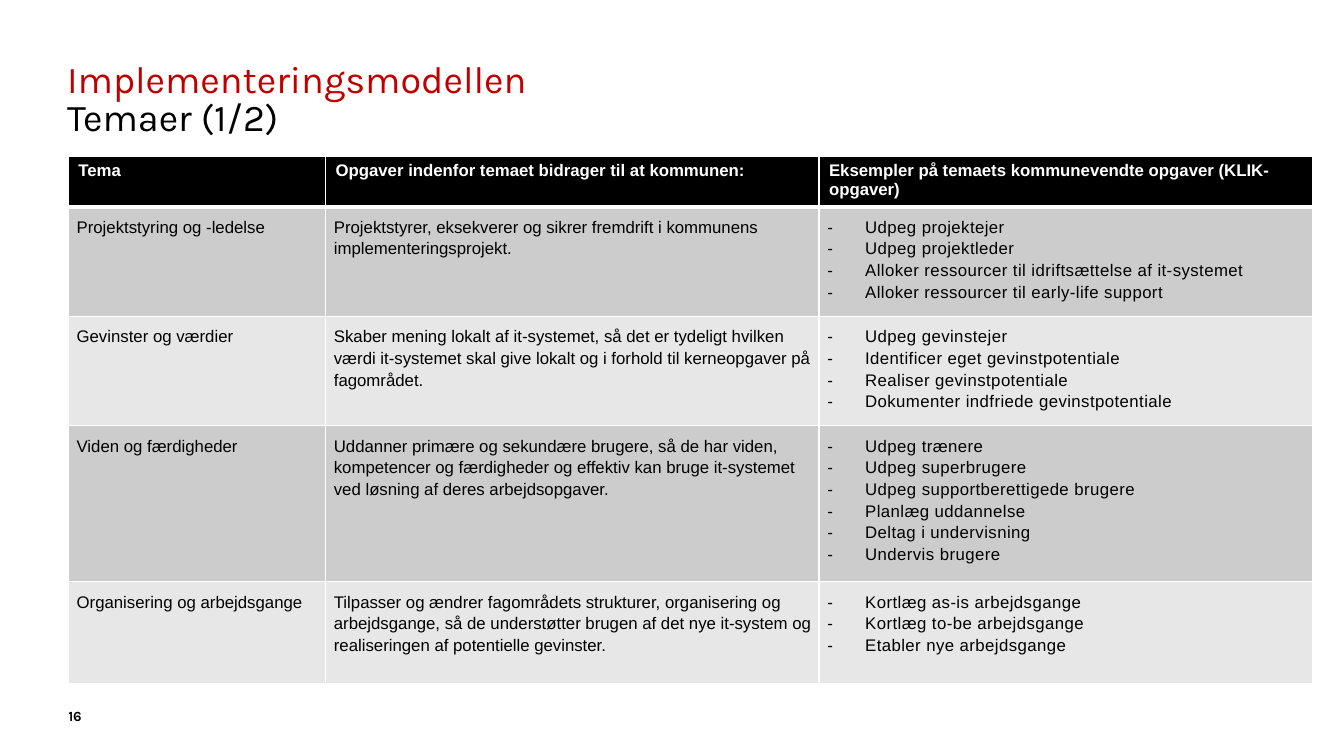
"""Build the slide that lists the themes of the implementation model."""
from dataclasses import dataclass

from lxml import etree
from pptx import Presentation
from pptx import util as u
from pptx.dml.color import RGBColor
from pptx.enum import text
from pptx.oxml import ns

EMU_PER_PX = 9525
BLACK = RGBColor(0x00, 0x00, 0x00)
WHITE = RGBColor(0xFF, 0xFF, 0xFF)
RED = RGBColor(0xC0, 0x00, 0x00)
BANDS = (RGBColor(0xCC, 0xCC, 0xCC), RGBColor(0xE7, 0xE7, 0xE7))
COLUMN_WIDTHS = (245, 470, 470)
HEADER_HEIGHT = 45
BULLET_INDENT = 36
HEADINGS = (
    "Tema",
    "Opgaver indenfor temaet bidrager til at kommunen:",
    "Eksempler på temaets kommunevendte opgaver (KLIK-opgaver)",
)


@dataclass(frozen=True)
class Theme:
    """One table row: a theme, its purpose and its example tasks."""
    name: str
    purpose: str
    tasks: tuple[str, ...]
    height: int = 97


THEMES = (
    Theme(
        "Projektstyring og -ledelse",
        "Projektstyrer, eksekverer og sikrer fremdrift i kommunens implementeringsprojekt.",
        ("Udpeg projektejer", "Udpeg projektleder",
         "Alloker ressourcer til idriftsættelse af it-systemet",
         "Alloker ressourcer til early-life support"),
    ),
    Theme(
        "Gevinster og værdier",
        "Skaber mening lokalt af it-systemet, så det er tydeligt hvilken værdi it-systemet "
        "skal give lokalt og i forhold til kerneopgaver på fagområdet.",
        ("Udpeg gevinstejer", "Identificer eget gevinstpotentiale",
         "Realiser gevinstpotentiale", "Dokumenter indfriede gevinstpotentiale"),
    ),
    Theme(
        "Viden og færdigheder",
        "Uddanner primære og sekundære brugere, så de har viden, kompetencer og færdigheder "
        "og effektiv kan bruge it-systemet ved løsning af deres arbejdsopgaver.",
        ("Udpeg trænere", "Udpeg superbrugere", "Udpeg supportberettigede brugere",
         "Planlæg uddannelse", "Deltag i undervisning", "Undervis brugere"),
        height=139,
    ),
    Theme(
        "Organisering og arbejdsgange",
        "Tilpasser og ændrer fagområdets strukturer, organisering og arbejdsgange, så de "
        "understøtter brugen af det nye it-system og realiseringen af potentielle gevinster.",
        ("Kortlæg as-is arbejdsgange", "Kortlæg to-be arbejdsgange",
         "Etabler nye arbejdsgange"),
    ),
)


def px(length: int) -> u.Emu:
    """Turn px into EMU."""
    return u.Emu(length * EMU_PER_PX)


def style(paragraph, name: str, size: int, color: RGBColor, bold: bool = False) -> None:
    """Set the font of a whole paragraph."""
    font = paragraph.font
    font.name, font.size, font.bold = name, u.Pt(size), bold
    font.color.rgb = color


def add_text(page, left: int, top: int, width: int, height: int, anchor):
    """Add a wrapping text box without insets and return its text frame."""
    frame = page.shapes.add_textbox(px(left), px(top), px(width), px(height)).text_frame
    frame.word_wrap = True
    frame.vertical_anchor = anchor
    frame.margin_left = frame.margin_top = frame.margin_right = frame.margin_bottom = 0
    return frame


def add_title(page) -> None:
    """Add the two-line title."""
    frame = add_text(page, 64, 60, 1144, 88, text.MSO_ANCHOR.TOP)
    lines = (("Implementeringsmodellen", RED), ("Temaer (1/2)", BLACK))
    for index, (line, color) in enumerate(lines):
        paragraph = frame.add_paragraph() if index else frame.paragraphs[0]
        paragraph.text = line
        paragraph.line_spacing = u.Pt(27)
        style(paragraph, "Karla", 27, color)


def add_page_number(page) -> None:
    """Add the page number."""
    frame = add_text(page, 65, 653, 50, 37, text.MSO_ANCHOR.BOTTOM)
    paragraph = frame.paragraphs[0]
    paragraph.text = "16"
    paragraph.line_spacing = u.Pt(13)
    style(paragraph, "Karla", 10, BLACK, bold=True)


def paint_cell(cell, color: RGBColor, top: int = 1, bottom: int = 1) -> None:
    """Fill a cell and draw its white borders, with widths in points."""
    cell.fill.solid()
    cell.fill.fore_color.rgb = color
    properties = cell._tc.get_or_add_tcPr()
    borders = (("lnL", 1), ("lnR", 1), ("lnT", top), ("lnB", bottom))
    for position, (tag, width) in enumerate(borders):
        line = etree.Element(ns.qn(f"a:{tag}"), w=str(u.Pt(width)))
        fill = etree.SubElement(line, ns.qn("a:solidFill"))
        etree.SubElement(fill, ns.qn("a:srgbClr"), val=str(WHITE))
        properties.insert(position, line)


def add_dash(paragraph) -> None:
    """Give a task paragraph a dash, a hanging indent and spaced letters."""
    properties = paragraph._p.get_or_add_pPr()
    properties.set("marL", str(px(BULLET_INDENT)))
    properties.set("indent", str(-px(BULLET_INDENT)))
    etree.SubElement(properties, ns.qn("a:buFont"), typeface="Arial")
    etree.SubElement(properties, ns.qn("a:buChar"), char="-")
    for run in paragraph.runs:
        run._r.get_or_add_rPr().set("spc", "30")


def fill_body_cell(cell, lines: tuple[str, ...], dashed: bool) -> None:
    """Write the lines of a body cell."""
    cell.margin_left = cell.margin_top = cell.margin_bottom = px(8)
    cell.margin_right = px(3)
    frame = cell.text_frame
    for index, line in enumerate(lines):
        paragraph = frame.add_paragraph() if index else frame.paragraphs[0]
        paragraph.text = line
        paragraph.line_spacing = 1.15
        if dashed:
            add_dash(paragraph)
        style(paragraph, "Arial", 12, BLACK)


def add_theme_table(page) -> None:
    """Add the table of themes."""
    heights = [HEADER_HEIGHT] + [theme.height for theme in THEMES]
    table = page.shapes.add_table(
        len(heights), len(COLUMN_WIDTHS), px(65), px(149),
        px(sum(COLUMN_WIDTHS)), px(sum(heights)),
    ).table
    table.horz_banding = False
    for column, width in zip(table.columns, COLUMN_WIDTHS):
        column.width = px(width)
    for row, height in zip(table.rows, heights):
        row.height = px(height)
    for column, heading in enumerate(HEADINGS):
        cell = table.cell(0, column)
        cell.text = heading
        style(cell.text_frame.paragraphs[0], "Arial", 12, WHITE, bold=True)
        paint_cell(cell, BLACK, bottom=3)
    for row, theme in enumerate(THEMES, start=1):
        for column, lines in enumerate(((theme.name,), (theme.purpose,), theme.tasks)):
            cell = table.cell(row, column)
            fill_body_cell(cell, lines, dashed=column == 2)
            paint_cell(cell, BANDS[(row - 1) % 2], top=3 if row == 1 else 1)


def main() -> None:
    """Build and save the deck."""
    deck = Presentation()
    deck.slide_width, deck.slide_height = px(1280), px(720)
    page = deck.slides.add_slide(deck.slide_layouts[6])
    add_title(page)
    add_page_number(page)
    add_theme_table(page)
    deck.save("out.pptx")


if __name__ == "__main__":
    main()
